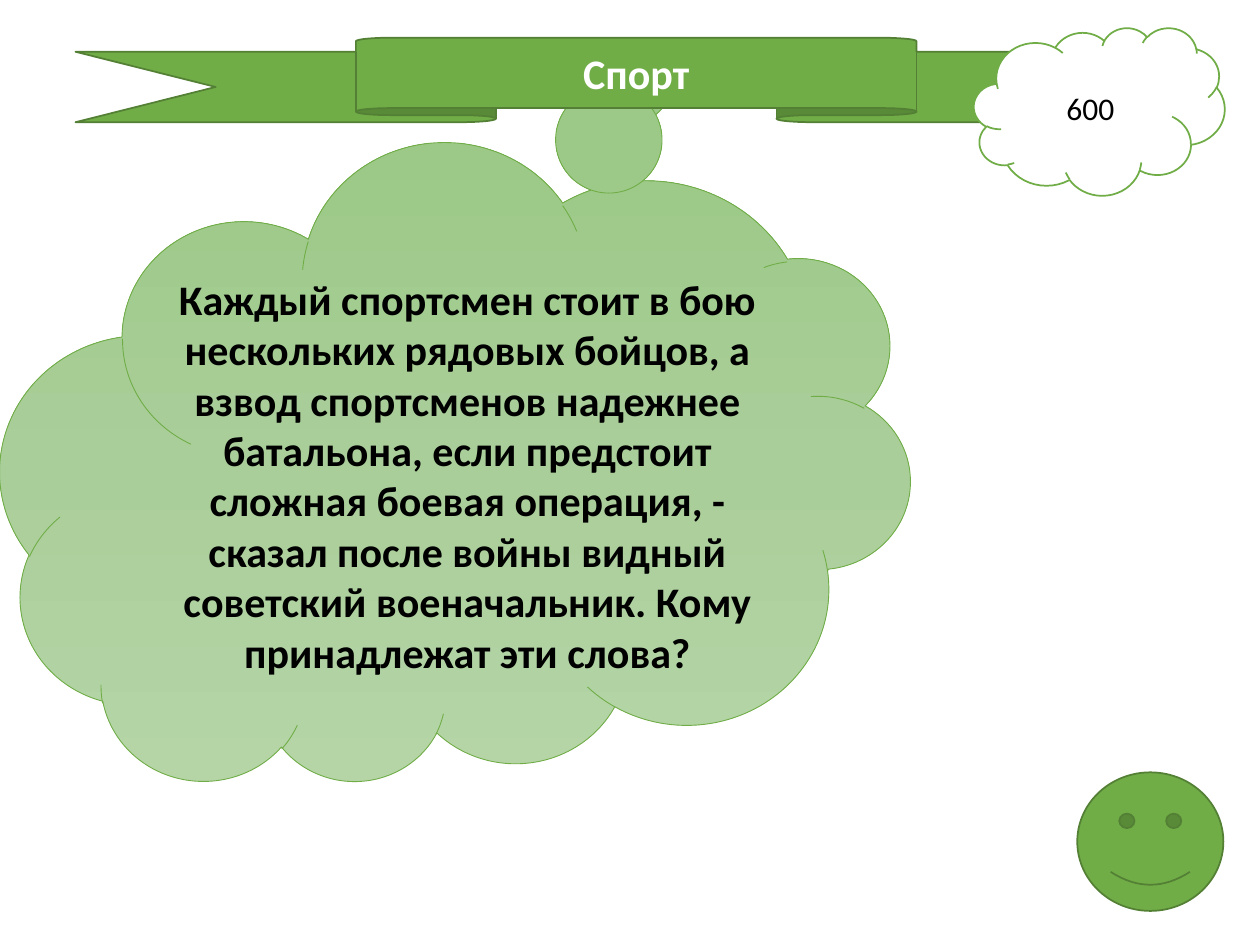
import copy

import pptx
import pptx.dml.color
import pptx.enum.shapes
import pptx.enum.text
import pptx.util
from pptx.oxml.ns import qn

SLIDE_W, SLIDE_H = 10, 7.5
GREEN, DARK_GREEN, WHITE, BLACK = "70AD47", "538035", "FFFFFF", "000000"
CLOUD_GRADIENT = [(0, "B5D5A7"), (0.5, "AACE9A"), (1, "9CC987")]
QUESTION = (
    "Каждый спортсмен стоит в бою нескольких рядовых бойцов, а взвод "
    "спортсменов надежнее батальона, если предстоит сложная боевая операция, "
    "- сказал после войны видный советский военачальник. "
    "Кому принадлежат эти слова?"
)

# Content from back to front: preset, box in inches, fill, line, line width
PARTS = [
    dict(preset="CLOUD_CALLOUT", box=(0, 1.15, 7.22, 5.07),
         fill=CLOUD_GRADIENT, line=GREEN, width=0.5, flipped=True),
    dict(preset="UP_RIBBON", box=(0.6, 0.3, 8.9, 0.67),
         fill=GREEN, line=DARK_GREEN, width=1,
         text="Спорт", font=dict(size=24, color=WHITE, bold=True)),
    dict(preset="CLOUD", box=(7.73, 0.22, 1.99, 1.33),
         fill=WHITE, line=GREEN, width=1,
         text="600", font=dict(size=18, color=BLACK, bold=False)),
    dict(preset="SMILEY_FACE", box=(8.55, 6.13, 1.16, 1.1),
         fill=GREEN, line=DARK_GREEN, width=1),
    dict(box=(1.08, 2.12, 5.26, 3.33),
         text=QUESTION, font=dict(size=24, color=BLACK, bold=True)),
]


def rgb(value):
    return pptx.dml.color.RGBColor.from_string(value)


def write(frame, text, size, color, bold):
    frame.word_wrap = True
    paragraph = frame.paragraphs[0]
    paragraph.alignment = pptx.enum.text.PP_ALIGN.CENTER
    run = paragraph.add_run()
    run.text = text
    formats = dict(name="Calibri", size=pptx.util.Pt(size), bold=bold)
    for attribute, value in formats.items():
        setattr(run.font, attribute, value)
    run.font.color.rgb = rgb(color)


def fill_gradient(shape, stops):
    shape.fill.gradient()
    shape.fill.gradient_angle = 270
    stop_list = shape._element.spPr.find(qn("a:gradFill")).find(qn("a:gsLst"))
    while len(stop_list) < len(stops):
        stop_list.append(copy.deepcopy(stop_list[0]))
    for stop, (position, color) in zip(shape.fill.gradient_stops, stops):
        stop.position = position
        stop.color.rgb = rgb(color)


def add_preset(slide, part, box):
    preset = getattr(pptx.enum.shapes.MSO_SHAPE, part["preset"])
    shape = slide.shapes.add_shape(preset, *box)
    shape.shadow.inherit = False
    if isinstance(part["fill"], list):
        fill_gradient(shape, part["fill"])
    else:
        shape.fill.solid()
        shape.fill.fore_color.rgb = rgb(part["fill"])
    shape.line.color.rgb = rgb(part["line"])
    shape.line.width = pptx.util.Pt(part["width"])
    if part.get("flipped"):
        for flip in ("flipH", "flipV"):
            shape._element.spPr.xfrm.set(flip, "1")
    shape.text_frame.vertical_anchor = pptx.enum.text.MSO_ANCHOR.MIDDLE
    return shape


def main():
    deck = pptx.Presentation()
    deck.slide_width = pptx.util.Inches(SLIDE_W)
    deck.slide_height = pptx.util.Inches(SLIDE_H)
    slide = deck.slides.add_slide(deck.slide_layouts[6])

    for part in PARTS:
        box = [pptx.util.Inches(length) for length in part["box"]]
        if "preset" in part:
            shape = add_preset(slide, part, box)
        else:
            shape = slide.shapes.add_textbox(*box)
            shape.text_frame.auto_size = (
                pptx.enum.text.MSO_AUTO_SIZE.SHAPE_TO_FIT_TEXT)
        if "text" in part:
            write(shape.text_frame, part["text"], **part["font"])

    deck.save("out.pptx")


if __name__ == "__main__":
    main()
